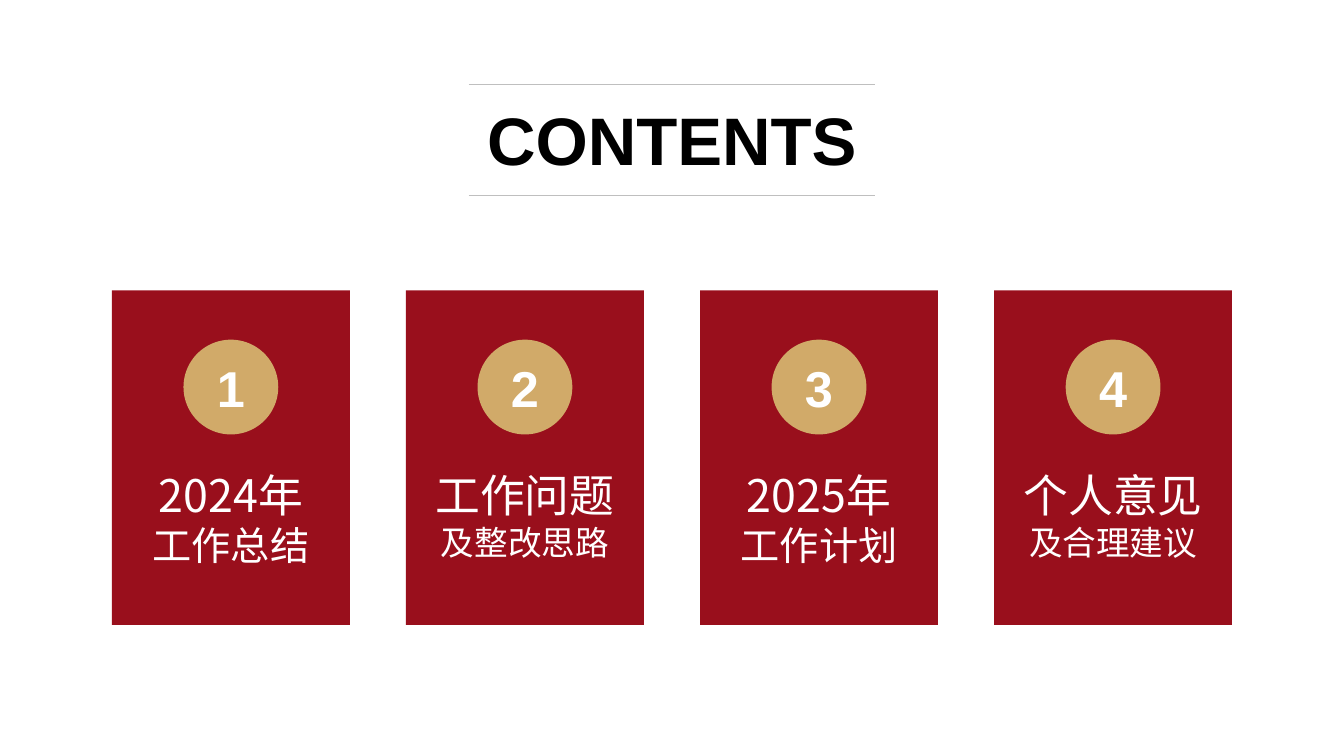
"""Build a contents slide with four numbered cards under a ruled title."""
import pptx
import pptx.util
import pptx.dml.color
import pptx.enum.shapes
import pptx.enum.text
import pptx.oxml.ns
import lxml.etree

HEAD = "CONTENTS"
CARDS = [
    (("2024年", 32), ("工作总结", 28)),
    (("工作问题", 32), ("及整改思路", 24)),
    (("2025年", 32), ("工作计划", 28)),
    (("个人意见", 32), ("及合理建议", 24)),
]
HUES = {"red": "990F1C", "gold": "D1AA69", "white": "FFFFFF",
        "black": "000000", "grey": "BFBFBF"}
LATIN, HAN = "Arial", "Noto Sans CJK SC"

WIDE, HIGH = 13.33, 7.5
CARD_W, CARD_H, TOP = 2.36, 3.32, 2.88
EDGE = 1.11
STEP = (WIDE - 2 * EDGE - CARD_W) / (len(CARDS) - 1)
DISC, DISC_Y = 0.94, TOP + 0.49
TEXT_W, TEXT_H, TEXT_Y = 1.98, 1.11, 4.59
HEAD_W, HEAD_H, HEAD_Y = 3.9, 0.91, 0.93
RULE_W, RULES = 4.03, (0.84, 1.94)

SHAPES = pptx.enum.shapes.MSO_SHAPE
ANCHOR = pptx.enum.text.MSO_ANCHOR


def inch(*sizes):
    """Turn inches into lengths."""
    return [pptx.util.Inches(size) for size in sizes]


def hue(name):
    """Give the colour of a name."""
    return pptx.dml.color.RGBColor.from_string(HUES[name])


def write(shape, lines, font=LATIN, color="white", bold=False,
          anchor=ANCHOR.TOP, wrap=False):
    """Set centred lines, each a pair of words and size."""
    frame = shape.text_frame
    frame.word_wrap = wrap
    frame.auto_size = pptx.enum.text.MSO_AUTO_SIZE.NONE
    frame.vertical_anchor = anchor
    for row, (words, size) in enumerate(lines):
        para = frame.add_paragraph() if row else frame.paragraphs[0]
        para.alignment = pptx.enum.text.PP_ALIGN.CENTER
        run = para.add_run()
        run.text = words
        run.font.size = pptx.util.Pt(size)
        run.font.bold = bold
        run.font.name = font
        run.font.color.rgb = hue(color)
        east = lxml.etree.SubElement(run.font._element, pptx.oxml.ns.qn("a:ea"))
        east.set("typeface", font)


def block(slide, kind, box, color):
    """Add a plain filled shape."""
    shape = slide.shapes.add_shape(kind, *inch(*box))
    shape.shadow.inherit = False
    shape.fill.solid()
    shape.fill.fore_color.rgb = hue(color)
    shape.line.fill.background()
    return shape


def rule(slide, y):
    """Add a thin centred line."""
    left = (WIDE - RULE_W) / 2
    line = slide.shapes.add_connector(
        pptx.enum.shapes.MSO_CONNECTOR.STRAIGHT, *inch(left, y, left + RULE_W, y))
    line.line.color.rgb = hue("grey")
    line.line.width = pptx.util.Pt(0.5)
    lxml.etree.SubElement(line._element.spPr, pptx.oxml.ns.qn("a:effectLst"))


def card(slide, index, lines):
    """Add one card with its number and label."""
    left = EDGE + index * STEP
    mid = left + CARD_W / 2
    block(slide, SHAPES.RECTANGLE, (left, TOP, CARD_W, CARD_H), "red")
    disc = block(slide, SHAPES.OVAL, (mid - DISC / 2, DISC_Y, DISC, DISC), "gold")
    write(disc, [(str(index + 1), 36)], bold=True, anchor=ANCHOR.MIDDLE, wrap=True)
    label = slide.shapes.add_textbox(
        *inch(mid - TEXT_W / 2, TEXT_Y, TEXT_W, TEXT_H))
    write(label, lines, font=HAN)


def main():
    """Build and save the slide."""
    deck = pptx.Presentation()
    deck.slide_width, deck.slide_height = inch(WIDE, HIGH)
    slide = deck.slides.add_slide(deck.slide_layouts[5])
    title = slide.shapes.title
    title.left, title.top, title.width, title.height = inch(
        (WIDE - HEAD_W) / 2, HEAD_Y, HEAD_W, HEAD_H)
    write(title, [(HEAD, 48)], color="black", bold=True)
    for y in RULES:
        rule(slide, y)
    for index, lines in enumerate(CARDS):
        card(slide, index, lines)
    deck.save("out.pptx")


if __name__ == "__main__":
    main()
